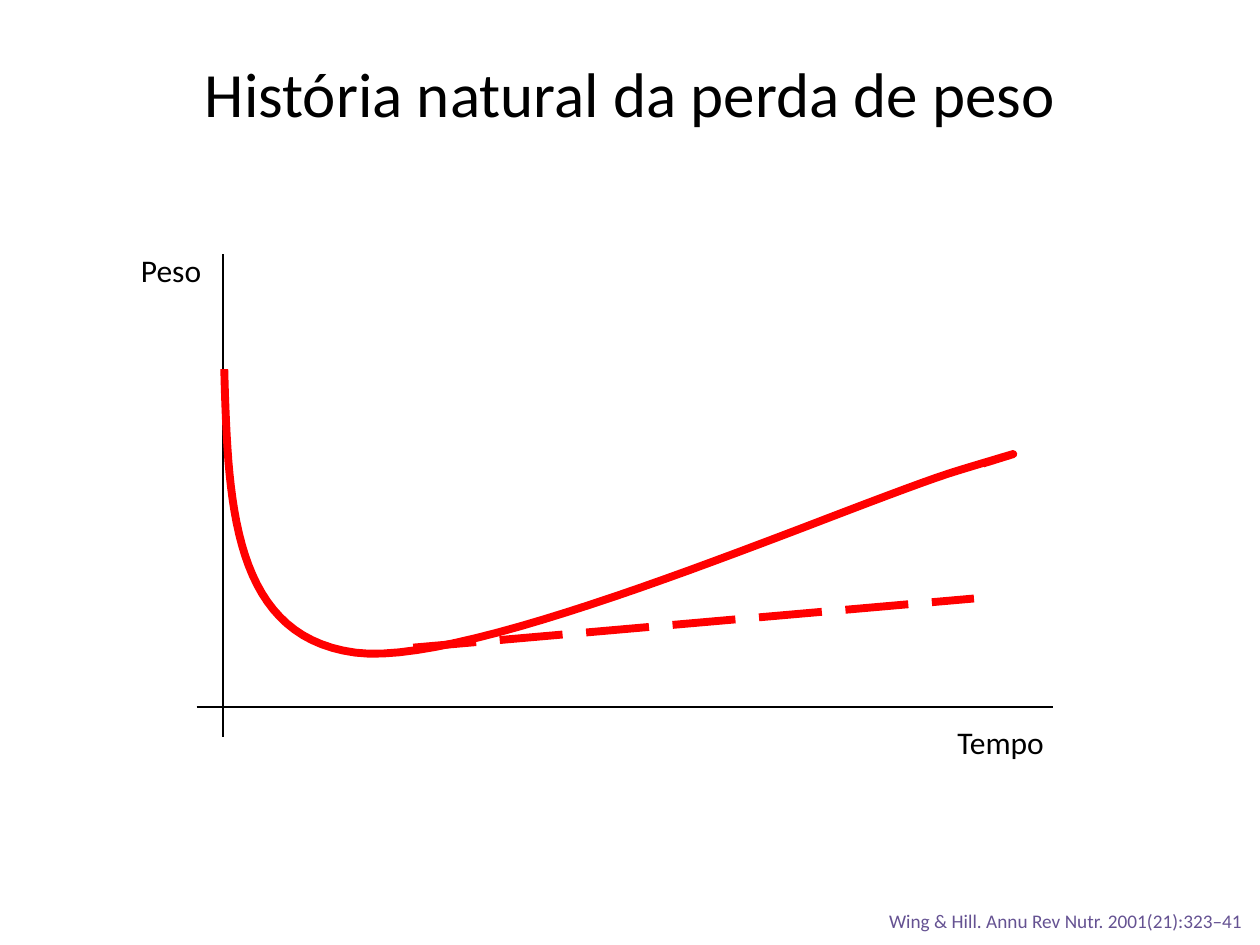
import pptx
import pptx.dml.color
import pptx.enum.dml
import pptx.enum.shapes
import pptx.enum.text
import pptx.oxml.ns
import pptx.util
from lxml import etree

COLORS = {"ink": "000000", "weight": "FF0000", "citation": "655292"}
ALIGN = pptx.enum.text.PP_ALIGN
COLUMNS, ROWS = 100, 75


def bezier(start, control_1, control_2, end, steps=30):
    """Points along a cubic curve, without its start."""
    points = []
    for step in range(1, steps + 1):
        t = step / steps
        shares = ((1 - t) ** 3, 3 * t * (1 - t) ** 2, 3 * t ** 2 * (1 - t), t ** 3)
        points.append(tuple(
            sum(share * value for share, value in zip(shares, values))
            for values in zip(start, control_1, control_2, end)))
    return points


class Sketch:
    """Style and current slide; lengths are columns and rows of a 100 x 75 grid."""

    font = "Calibri"

    def __init__(self, presentation):
        self.cell_width = presentation.slide_width / COLUMNS
        self.cell_height = presentation.slide_height / ROWS
        self.slide = presentation.slides.add_slide(presentation.slide_layouts[5])

    def grid(self, column, row):
        return round(column * self.cell_width), round(row * self.cell_height)

    def color(self, name):
        return pptx.dml.color.RGBColor.from_string(COLORS[name])

    def set_text(self, frame, text, size, color, align):
        frame.text = text
        paragraph = frame.paragraphs[0]
        paragraph.alignment = align
        paragraph.font.name = self.font
        paragraph.font.size = pptx.util.Pt(size)
        paragraph.font.color.rgb = self.color(color)

    def title(self, text, left, top, width, height):
        heading = self.slide.shapes.title
        heading.left, heading.top = self.grid(left, top)
        heading.width, heading.height = self.grid(width, height)
        heading.text_frame.vertical_anchor = pptx.enum.text.MSO_ANCHOR.MIDDLE
        self.set_text(heading.text_frame, text, 36, "ink", ALIGN.CENTER)

    def label(self, text, left, top, width, height, size=18, color="ink", align=ALIGN.LEFT):
        box = self.slide.shapes.add_textbox(*self.grid(left, top), *self.grid(width, height))
        box.text_frame.word_wrap = False
        box.text_frame.auto_size = pptx.enum.text.MSO_AUTO_SIZE.SHAPE_TO_FIT_TEXT
        self.set_text(box.text_frame, text, size, color, align)

    def stroke(self, line, color, width):
        line.color.rgb = self.color(color)
        line.width = pptx.util.Pt(width)

    def line(self, start, end, color="ink", width=1.5, dash=None):
        connector = self.slide.shapes.add_connector(
            pptx.enum.shapes.MSO_CONNECTOR.STRAIGHT, *self.grid(*start), *self.grid(*end))
        self.stroke(connector.line, color, width)
        if dash:
            connector.line.dash_style = dash
        etree.SubElement(connector._element.spPr, pptx.oxml.ns.qn("a:effectLst"))

    def curve(self, points, color, width):
        start, *rest = [self.grid(*point) for point in points]
        builder = self.slide.shapes.build_freeform(*start)
        builder.add_line_segments(rest, close=False)
        outline = builder.convert_to_shape()
        outline.fill.background()
        outline.shadow.inherit = False
        self.stroke(outline.line, color, width)
        etree.SubElement(outline.line._get_or_add_ln(), pptx.oxml.ns.qn("a:round"))


def main():
    presentation = pptx.Presentation()
    presentation.slide_width = pptx.util.Inches(10)
    presentation.slide_height = pptx.util.Inches(7.5)
    sketch = Sketch(presentation)

    # Title and citation
    sketch.title("História natural da perda de peso", 0, 3, 100, 8.6)
    sketch.label("Wing & Hill. Annu Rev Nutr. 2001(21):323–41", 69.1, 71.7, 30.5, 2.9,
                 size=11, color="citation", align=ALIGN.RIGHT)

    # Axes
    sketch.line((17.7, 20.2), (17.7, 58.5))
    sketch.line((15.6, 56.1), (83.6, 56.1))

    # Weight falls quickly, then is regained
    baseline, lowest, regained, final = (17.8, 29.3), (28.2, 51.8), (76.2, 37.3), (78, 36.8)
    weight = [baseline]
    weight += bezier(baseline, (18.1, 39.9), (18.4, 50.5), lowest)
    weight += bezier(lowest, (37.9, 53.1), (67.9, 39.8), regained)
    weight += bezier(regained, (84.5, 34.8), final, final)
    sketch.curve(weight, "weight", 4.5)

    # Slower regain
    sketch.line((32.8, 51.4), (77.3, 47.5), "weight", 4.5,
                pptx.enum.dml.MSO_LINE.LONG_DASH)

    # Axis labels
    sketch.label("Peso", 10.2, 19.4, 7.8, 4)
    sketch.label("Tempo", 75, 56.9, 9.6, 4)

    presentation.save("out.pptx")


if __name__ == "__main__":
    main()
